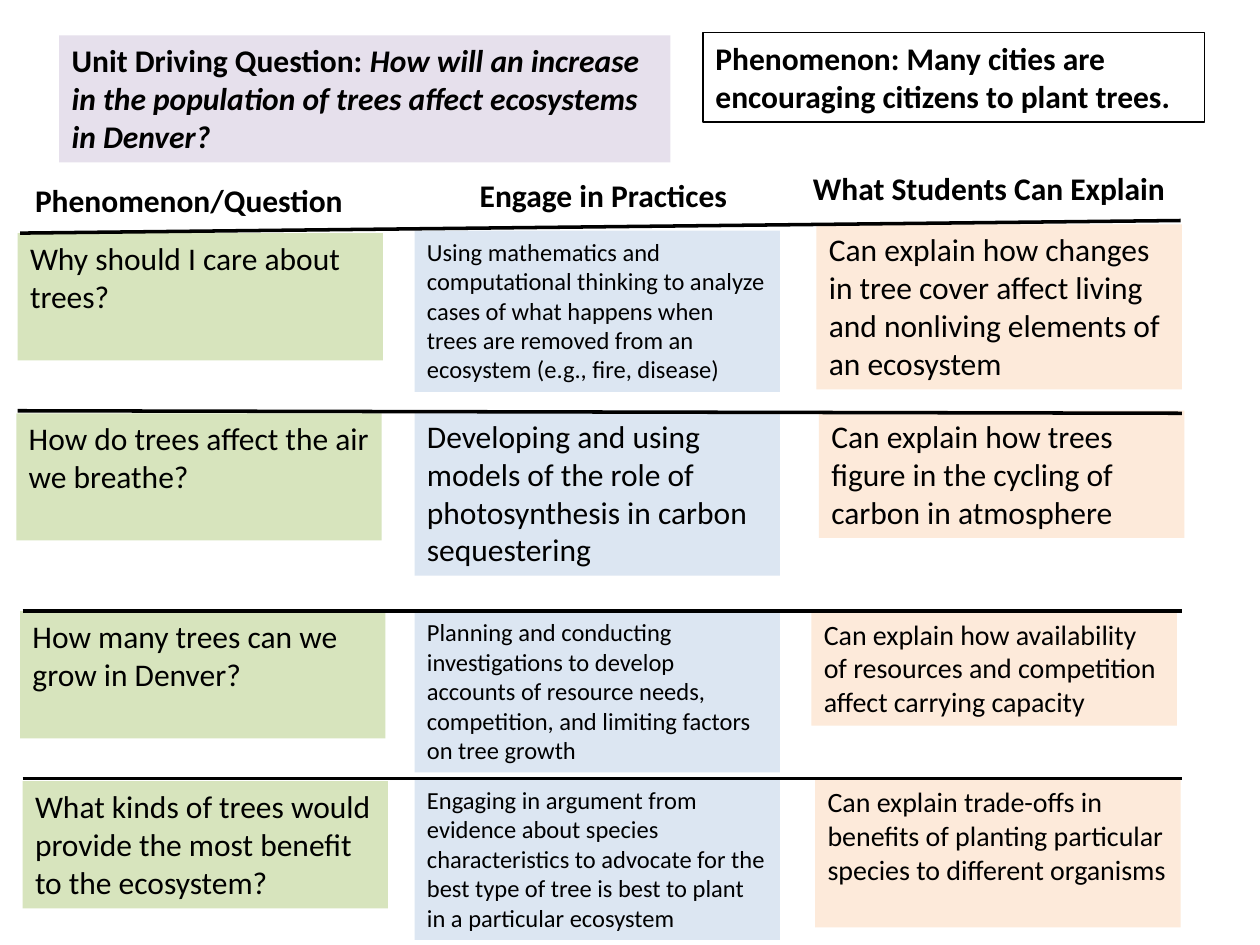
from lxml.etree import SubElement
from pptx import Presentation
from pptx.dml.color import RGBColor
from pptx.enum.shapes import MSO_CONNECTOR as Connector
from pptx.enum.text import MSO_ANCHOR as Anchor, MSO_AUTO_SIZE as AutoSize, PP_ALIGN as Align
from pptx.oxml.ns import qn
from pptx.util import Inches, Pt

THEME = {
    "font": "Calibri", "ink": "000000",
    "unit": "E6E0EC", "question": "D7E4BD", "practice": "DCE6F2", "explain": "FDEADA",
    "large": 18, "medium": 16, "small": 14,
    "frame": 0.75, "rule": 2,
}

UNIT_QUESTION = [
    ("Unit Driving Question: ", False),
    ("How will an increase in the population of trees affect ecosystems in Denver?", True),
]
PHENOMENON = "Phenomenon: Many cities are encouraging citizens to plant trees."

# Heading, left, top, alignment
HEADINGS = [
    ("Phenomenon/Question", 0.18, 1.39, Align.LEFT),
    ("Engage in Practices", 3.26, 1.35, Align.CENTER),
    ("What Students Can Explain", 6.32, 1.29, Align.CENTER),
]
HEADING_SIZE = (3.06, 0.4)

COLUMNS = ("question", "practice", "explain")
CARD_WIDTH = 2.9

# Each row: its rule (from, to), then per column (text, type size, left, top, height)
ROWS = [
    {"rule": ((0.16, 1.85), (9.37, 1.75)), "cards": [
        ("Why should I care about trees?", "large", 0.14, 1.85, 1.01),
        ("Using mathematics and computational thinking to analyze cases of what happens "
         "when trees are removed from an ecosystem (e.g., fire, disease)",
         "small", 3.29, 1.83, 1.28),
        ("Can explain how changes in tree cover affect living and nonliving elements "
         "of an ecosystem", "large", 6.48, 1.78, 1.31),
    ]},
    {"rule": ((0.14, 3.26), (9.38, 3.28)), "cards": [
        ("How do trees affect the air we breathe?", "large", 0.13, 3.28, 1.01),
        ("Developing and using models of the role of photosynthesis in carbon sequestering",
         "large", 3.29, 3.26, 1.31),
        ("Can explain how trees figure in the cycling of carbon in atmosphere",
         "large", 6.5, 3.26, 1.01),
    ]},
    {"rule": ((0.18, 4.85), (9.38, 4.85)), "cards": [
        ("How many trees can we grow in Denver?", "large", 0.16, 4.85, 1.01),
        ("Planning and conducting investigations to develop accounts of resource needs, "
         "competition, and limiting factors on tree growth", "small", 3.29, 4.85, 1.28),
        ("Can explain how availability of resources and competition affect carrying capacity",
         "medium", 6.44, 4.85, 0.91),
    ]},
    {"rule": ((0.18, 6.18), (9.38, 6.18)), "cards": [
        ("What kinds of trees would provide the most benefit to the ecosystem?",
         "large", 0.18, 6.2, 1.01),
        ("Engaging in argument from evidence about species characteristics to advocate "
         "for the best type of tree is best to plant in a particular ecosystem",
         "small", 3.29, 6.18, 1.28),
        ("Can explain trade-offs in benefits of planting particular species to different "
         "organisms", "medium", 6.47, 6.18, 1.18),
    ]},
]


def color(name):
    return RGBColor.from_string(THEME[name])


def add_text(slide, text, left, top, width, height, *, size="large", bold=False,
             align=Align.LEFT, fill=None, framed=False):
    """Add a text box; text is a string or a list of (words, italic) pairs."""
    box = slide.shapes.add_textbox(*map(Inches, (left, top, width, height)))
    if fill:
        box.fill.solid()
        box.fill.fore_color.rgb = color(fill)
    if framed:
        box.line.color.rgb = color("ink")
        box.line.width = Pt(THEME["frame"])
    frame = box.text_frame
    frame.word_wrap = True
    frame.auto_size = AutoSize.NONE
    frame.vertical_anchor = Anchor.TOP
    para = frame.paragraphs[0]
    para.alignment = align
    for words, italic in [(text, False)] if isinstance(text, str) else text:
        span = para.add_run()
        span.text = words
        span.font.name = THEME["font"]
        span.font.size = Pt(THEME[size])
        span.font.bold = bold
        span.font.italic = italic
        span.font.color.rgb = color("ink")


def add_rule(slide, start, end):
    rule = slide.shapes.add_connector(Connector.STRAIGHT, *map(Inches, start + end))
    rule.line.color.rgb = color("ink")
    rule.line.width = Pt(THEME["rule"])
    SubElement(rule._element.spPr, qn("a:effectLst"))


def main():
    deck = Presentation()
    deck.slide_width, deck.slide_height = Inches(10), Inches(7.5)
    slide = deck.slides.add_slide(deck.slide_layouts[6])

    add_text(slide, UNIT_QUESTION, 0.47, 0.28, 4.85, 1.01, bold=True, fill="unit")
    add_text(slide, PHENOMENON, 5.58, 0.26, 3.98, 0.71, bold=True, framed=True)
    for heading, left, top, align in HEADINGS:
        add_text(slide, heading, left, top, *HEADING_SIZE, bold=True, align=align)

    for row in ROWS:
        for column, (text, size, left, top, height) in zip(COLUMNS, row["cards"]):
            add_text(slide, text, left, top, CARD_WIDTH, height, size=size, fill=column)
    for row in ROWS:
        add_rule(slide, *row["rule"])

    deck.save("out.pptx")


if __name__ == "__main__":
    main()
